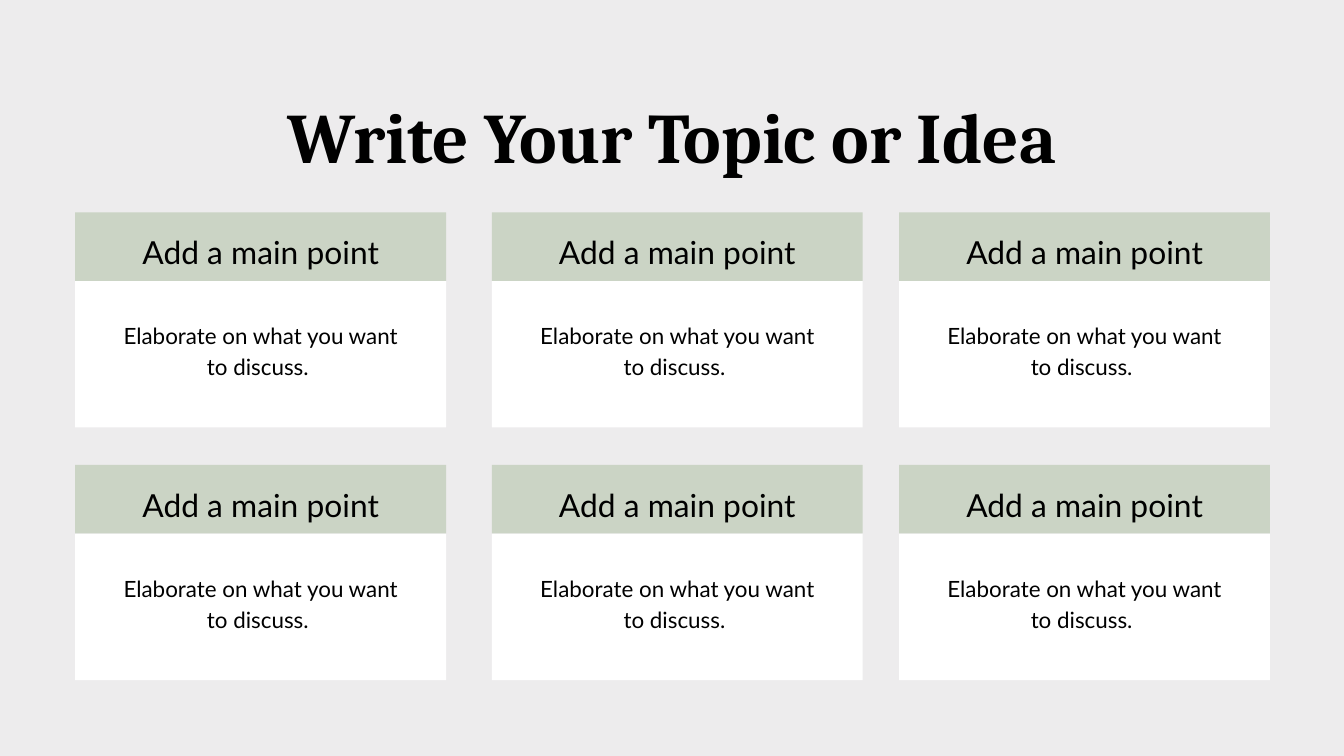
"""Build a slide with a title above a grid of six cards."""
from pptx import Presentation
from pptx.dml.color import RGBColor
from pptx.enum.shapes import MSO_SHAPE as Shape
from pptx.enum.text import MSO_ANCHOR as Anchor, MSO_AUTO_SIZE as Auto, PP_ALIGN as Align
from pptx.util import Inches, Pt


def paint(fill, tint):
    fill.solid()
    fill.fore_color.rgb = RGBColor.from_string(tint)


def write(box, text, face, size, gap, bold=False):
    frame = box.text_frame
    frame.text = text
    frame.word_wrap = True
    frame.auto_size = Auto.SHAPE_TO_FIT_TEXT
    frame.vertical_anchor = Anchor.TOP
    frame.margin_left = frame.margin_right = 0
    frame.margin_top = frame.margin_bottom = 0
    para = frame.paragraphs[0]
    para.alignment = Align.CENTER
    para.line_spacing = gap
    font = para.runs[0].font
    font.name, font.size, font.bold = face, Pt(size), bold
    paint(font.fill, "000000")


deck = Presentation()
deck.slide_width, deck.slide_height = Inches(10), Inches(10 * 9 / 16)
slide = deck.slides.add_slide(deck.slide_layouts[5])
paint(slide.background.fill, "EDECED")

edge = 0.56
title = slide.shapes.title
title.left, title.top = Inches(edge), Inches(edge)
title.width, title.height = Inches(10 - 2 * edge), Inches(0.64)
write(title, "Write Your Topic or Idea", "Cambria", 38, 1.2, True)

wide, head, body = 2.76, 0.51, 1.09
columns = (edge, 3.66, 6.69)
rows = (1.58, 3.46)

for top in rows:
    for left in columns:
        card = slide.shapes.add_group_shape().shapes
        for y, high, tint in ((top + head, body, "FFFFFF"), (top, head, "CBD4C5")):
            panel = card.add_shape(
                Shape.RECTANGLE, Inches(left), Inches(y), Inches(wide), Inches(high))
            panel.shadow.inherit = False
            paint(panel.fill, tint)
            panel.line.fill.background()
        for text, drop, span, high, size in (
            ("Elaborate on what you want to discuss. ", 0.79, 2.15, 0.43, 12),
            ("Add a main point", 0.11, 2.09, 0.29, 17),
        ):
            label = card.add_textbox(
                Inches(left + (wide - span) / 2), Inches(top + drop),
                Inches(span), Inches(high))
            write(label, text, "Lato", size, 1.15)

deck.save("out.pptx")
